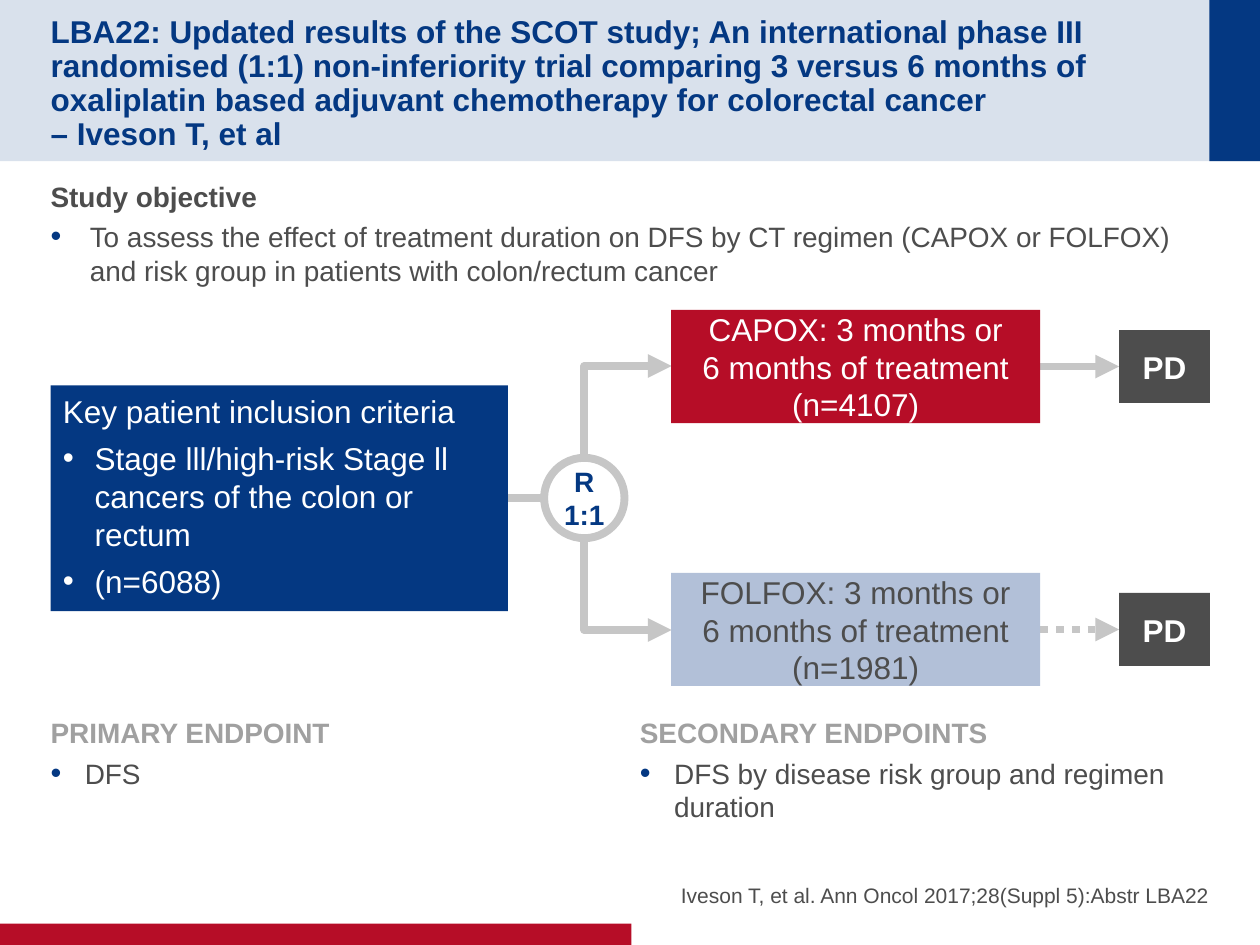
from lxml import etree
from pptx import Presentation
from pptx import util as u
from pptx.dml.color import RGBColor
from pptx.enum import dml, shapes, text
from pptx.oxml.ns import qn

C = {"navy": "043882", "pale": "D9E1EC", "red": "B60D27", "dark": "4D4D4D",
     "grey": "A0A0A0", "line": "C6C6C6", "blue": "B2C0D8", "white": "FFFFFF"}
Cm, Pt = u.Cm, u.Pt
AL, AN, SH = text.PP_ALIGN, text.MSO_ANCHOR, shapes.MSO_SHAPE


def write(sp, rows, size, align=AL.LEFT, anchor=AN.TOP, ins=(0, 0.13, 0, 0.13),
          after=0, indent=0, dot=None, spacing=1.0):
    tf = sp.text_frame
    tf.word_wrap, tf.auto_size = True, text.MSO_AUTO_SIZE.NONE
    tf.vertical_anchor = anchor
    tf.margin_left, tf.margin_top, tf.margin_right, tf.margin_bottom = map(Cm, ins)
    for i, (words, color, bold, bullet) in enumerate(rows):
        p = tf.add_paragraph() if i else tf.paragraphs[0]
        p.text = words
        p.alignment, p.line_spacing = align, spacing
        p.space_before, p.space_after = Pt(0), Pt(after)
        for r in p.runs:
            r.font.name, r.font.size, r.font.bold = "Arial", Pt(size), bold
            r.font.color.rgb = RGBColor.from_string(C[color])
        pPr = p._p.get_or_add_pPr()
        pPr.set("marL", str(Cm(indent) if bullet else 0))
        pPr.set("indent", str(-Cm(indent) if bullet else 0))
        if not bullet:
            etree.SubElement(pPr, qn("a:buNone"))
            continue
        if dot:
            clr = etree.SubElement(pPr, qn("a:buClr"))
            etree.SubElement(clr, qn("a:srgbClr")).set("val", C[dot])
            etree.SubElement(pPr, qn("a:buSzPct")).set("val", "110000")
        etree.SubElement(pPr, qn("a:buFont")).set("typeface", "Arial")
        etree.SubElement(pPr, qn("a:buChar")).set("char", "•")


def connect(kind, x1, y1, x2, y2, arrow=True, dash=None):
    c = s.shapes.add_connector(kind, Cm(x1), Cm(y1), Cm(x2), Cm(y2))
    c.line.width = Pt(4.5)
    c.line.color.rgb = RGBColor.from_string(C["line"])
    if dash:
        c.line.dash_style = dash
    if arrow:
        etree.SubElement(c.line._get_or_add_ln(), qn("a:tailEnd")).set("type", "triangle")
    etree.SubElement(c._element.spPr, qn("a:effectLst"))
    return c


prs = Presentation()
prs.slide_width, prs.slide_height = Cm(25.4), Cm(19.05)
s = prs.slides.add_slide(prs.slide_layouts[4])
title, objective, citation, primary, secondary = s.placeholders

for x, y, w, h, color in [(0, 0, 25.4, 3.25, "pale"), (24.38, 0, 1.02, 3.25, "navy"),
                          (0, 18.62, 12.73, 0.43, "red")]:
    sp = s.shapes.add_shape(SH.RECTANGLE, Cm(x), Cm(y), Cm(w), Cm(h))
    sp.shadow.inherit = False
    sp.fill.solid()
    sp.fill.fore_color.rgb = RGBColor.from_string(C[color])
    sp.line.fill.background()
    title._element.addprevious(sp._element)

for sp, x, y, w, h in [(title, 1.02, 0.51, 22.89, 2.24), (objective, 1.02, 3.48, 23.37, 3),
                       (citation, 12.9, 16.94, 11.48, 1.35), (primary, 1.02, 14.3, 11.48, 2.06),
                       (secondary, 12.9, 14.3, 11.48, 2.06)]:
    sp.left, sp.top, sp.width, sp.height = Cm(x), Cm(y), Cm(w), Cm(h)

write(title, [("LBA22: Updated results of the SCOT study; An international phase III randomised "
               "(1:1) non-inferiority trial comparing 3 versus 6 months of oxaliplatin based "
               "adjuvant chemotherapy for colorectal cancer\v– Iveson T, et al",
               "navy", True, False)],
      18, anchor=AN.MIDDLE, ins=(0, 0.13, 0, 0), spacing=0.9)
write(citation, [("Iveson T, et al. Ann Oncol 2017;28(Suppl 5):Abstr LBA22", "dark", False, False)],
      12, AL.RIGHT, AN.BOTTOM, (0, 0, 0, 0), after=4)
for sp, head, color, item, indent in [
        (objective, "Study objective", "dark",
         "To assess the effect of treatment duration on DFS by CT regimen (CAPOX or FOLFOX) "
         "and risk group in patients with colon/rectum cancer", 0.79),
        (primary, "PRIMARY ENDPOINT", "grey", "DFS", 0.69),
        (secondary, "SECONDARY ENDPOINTS", "grey",
         "DFS by disease risk group and regimen duration", 0.69)]:
    write(sp, [(head, color, True, False), (item, "dark", False, True)],
          16, after=4, indent=indent, dot="navy")

mid, rise = 10.04, 2.65
connect(shapes.MSO_CONNECTOR.STRAIGHT, 10.24, mid, 10.97, mid, arrow=False)

sp = s.shapes.add_shape(SH.RECTANGLE, Cm(1.02), Cm(7.77), Cm(9.22), Cm(4.55))
sp.shadow.inherit = False
sp.fill.solid()
sp.fill.fore_color.rgb = RGBColor.from_string(C["navy"])
sp.line.fill.background()
write(sp, [("Key patient inclusion criteria", "white", False, False),
           ("Stage lll/high-risk Stage ll cancers of the colon or rectum", "white", False, True),
           ("(n=6088)", "white", False, True)],
      18, ins=(0.25, 0.13, 0.25, 0.13), after=5.4, indent=0.64)

for side, regimen, n, fill, ink, dash in [
        (-1, "CAPOX", "4107", "red", "white", None),
        (1, "FOLFOX", "1981", "blue", "dark", dml.MSO_LINE.ROUND_DOT)]:
    y = mid + side * rise
    turn = y - side * 0.92
    c = connect(shapes.MSO_CONNECTOR.ELBOW, 13.59, turn - side * 0.88, 11.73, turn + side * 0.88)
    c._element.spPr.find(qn("a:prstGeom")).set("prst", "bentConnector2")
    c._element.spPr.find(qn("a:xfrm")).set("rot", "5400000" if side < 0 else "16200000")
    connect(shapes.MSO_CONNECTOR.STRAIGHT, 20.97, y, 22.56, y, dash=dash)
    arm = [(f"{regimen}: 3 months or\v6 months of treatment", ink, False, False),
           (f"(n={n})", ink, False, False)]
    for x, w, h, color, rows in [(13.53, 7.44, 2.28, fill, arm),
                                 (22.56, 1.83, 1.47, "dark", [("PD", "white", True, False)])]:
        sp = s.shapes.add_shape(SH.RECTANGLE, Cm(x), Cm(y - h / 2), Cm(w), Cm(h))
        sp.shadow.inherit = False
        sp.fill.solid()
        sp.fill.fore_color.rgb = RGBColor.from_string(C[color])
        sp.line.fill.background()
        write(sp, rows, 18, AL.CENTER, AN.MIDDLE, (0.25, 0, 0.25, 0))

sp = s.shapes.add_shape(SH.OVAL, Cm(10.97), Cm(mid - 0.81), Cm(1.62), Cm(1.62))
sp.shadow.inherit = False
sp.fill.background()
sp.line.width = Pt(4.5)
sp.line.color.rgb = RGBColor.from_string(C["line"])
write(sp, [("R", "navy", True, False), ("1:1", "navy", True, False)],
      16, AL.CENTER, AN.MIDDLE, (0.25, 0.13, 0.25, 0.13))
sp.text_frame.word_wrap = False

prs.save("out.pptx")
